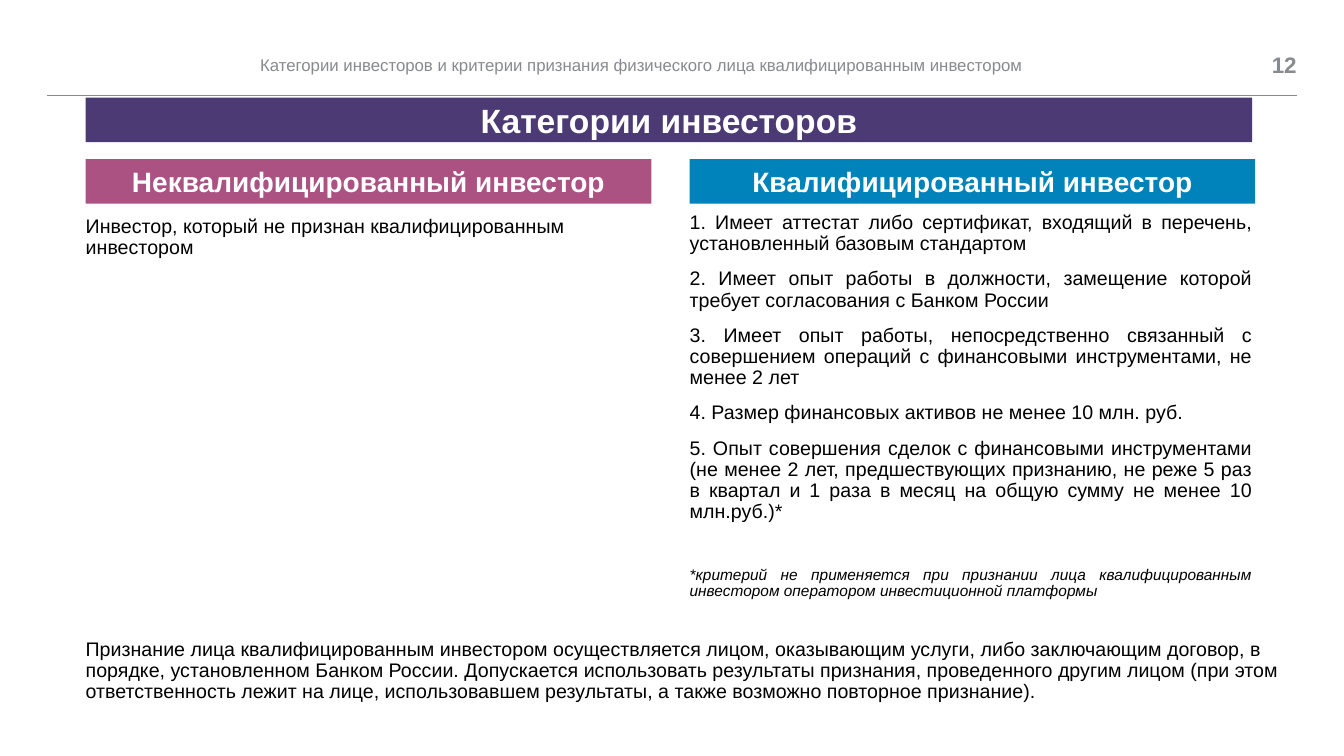
from lxml.etree import SubElement
from pptx import Presentation
from pptx.dml.color import RGBColor
from pptx.enum.shapes import MSO_CONNECTOR as Connector, MSO_SHAPE as Shape
from pptx.enum.text import MSO_ANCHOR as Anchor, PP_ALIGN as Align
from pptx.oxml.ns import qn
from pptx.util import Inches, Pt

GRAY = RGBColor(0x88, 0x8A, 0x8D)
BLACK = RGBColor(0, 0, 0)
WHITE = RGBColor(0xFF, 0xFF, 0xFF)
PURPLE = RGBColor(0x4C, 0x3A, 0x74)
PINK = RGBColor(0xAB, 0x52, 0x82)
BLUE = RGBColor(0x00, 0x82, 0xBB)

LEFT, RIGHT_COLUMN = 0.85, 6.84
COLUMN_WIDTH, BANNER_WIDTH = 5.61, 11.57
BAR_HEIGHT = 0.44

CRITERIA = [
    "Имеет аттестат либо сертификат, входящий в перечень, установленный базовым стандартом",
    "Имеет опыт работы в должности, замещение которой требует согласования с Банком России",
    "Имеет опыт работы, непосредственно связанный с совершением операций "
    "с финансовыми инструментами, не менее 2 лет",
    "Размер финансовых активов не менее 10 млн. руб.",
    "Опыт совершения сделок с финансовыми инструментами (не менее 2 лет, предшествующих "
    "признанию, не реже 5 раз в квартал и 1 раза в месяц на общую сумму не менее 10 млн.руб.)*",
]
FOOTNOTE = ("*критерий не применяется при признании лица квалифицированным "
            "инвестором оператором инвестиционной платформы")
RECOGNITION = (
    "Признание лица квалифицированным инвестором осуществляется лицом, оказывающим услуги, "
    "либо заключающим договор, в порядке, установленном Банком России. Допускается "
    "использовать результаты признания, проведенного другим лицом (при этом ответственность "
    "лежит на лице, использовавшем результаты, а также возможно повторное признание).")


def write(para, text, size=14, color=BLACK, bold=False, italic=False,
          align=Align.LEFT, spacing=None, before=0):
    para.alignment = align
    para.space_before = Pt(before)
    if spacing:
        para.line_spacing = spacing
    span = para.add_run()
    span.text = text
    font = span.font
    font.name, font.size = "Arial", Pt(size)
    font.bold, font.italic = bold, italic
    font.color.rgb = color


def add_frame(page, left, top, width, height, anchor=Anchor.TOP):
    """Add a wrapping text box without margins and return its text frame."""
    box = page.shapes.add_textbox(Inches(left), Inches(top), Inches(width), Inches(height))
    frame = box.text_frame
    frame.word_wrap = True
    frame.vertical_anchor = anchor
    frame.margin_left = frame.margin_right = frame.margin_top = frame.margin_bottom = 0
    return frame


def add_header(page, left, top, width, title, number):
    """Running title and page number above a thin rule."""
    rule_top, number_width = top + 0.48, 0.81
    right = left + width
    rule = page.shapes.add_connector(Connector.STRAIGHT, Inches(left), Inches(rule_top),
                                     Inches(right), Inches(rule_top))
    rule.line.color.rgb = GRAY
    rule.line.width = Pt(0.5)
    SubElement(rule._element.spPr, qn("a:effectLst"))
    title_frame = add_frame(page, left + 2.11, top, 9.23, 0.35, Anchor.MIDDLE)
    write(title_frame.paragraphs[0], title, size=12, color=GRAY)
    number_frame = add_frame(page, right - number_width, top, number_width, 0.35, Anchor.MIDDLE)
    write(number_frame.paragraphs[0], number, size=16, color=GRAY, bold=True, align=Align.RIGHT)


def add_bar(page, left, top, width, text, fill, size=20):
    bar = page.shapes.add_shape(Shape.RECTANGLE, Inches(left), Inches(top),
                                Inches(width), Inches(BAR_HEIGHT))
    bar.shadow.inherit = False
    bar.fill.solid()
    bar.fill.fore_color.rgb = fill
    bar.line.fill.background()
    bar.text_frame.vertical_anchor = Anchor.MIDDLE
    write(bar.text_frame.paragraphs[0], text, size=size, color=WHITE, bold=True,
          align=Align.CENTER)


def add_body(page, left, top, width, height, text):
    frame = add_frame(page, left, top, width, height)
    write(frame.paragraphs[0], text, spacing=0.9)


def add_criteria(page, left, top, width, height):
    """Numbered criteria followed by a footnote."""
    frame = add_frame(page, left, top, width, height)
    for number, criterion in enumerate(CRITERIA, 1):
        first = number == 1
        para = frame.paragraphs[0] if first else frame.add_paragraph()
        write(para, f"{number}. {criterion}", align=Align.JUSTIFY, spacing=0.9,
              before=0 if first else 10)
    write(frame.add_paragraph(), FOOTNOTE, size=11, italic=True, align=Align.JUSTIFY,
          spacing=0.9, before=31.4)


def main():
    deck = Presentation()
    deck.slide_width, deck.slide_height = Inches(13.33), Inches(7.5)
    page = deck.slides.add_slide(deck.slide_layouts[6])
    add_header(page, 0.47, 0.47, 12.39,
               "Категории инвесторов и критерии признания физического лица "
               "квалифицированным инвестором", "12")
    add_body(page, LEFT, 2.15, COLUMN_WIDTH, 4.1,
             "Инвестор, который не признан квалифицированным инвестором")
    add_criteria(page, RIGHT_COLUMN, 2.11, 5.58, 4.1)
    add_bar(page, LEFT, 0.97, BANNER_WIDTH, "Категории инвесторов", PURPLE, size=24)
    add_bar(page, LEFT, 1.58, COLUMN_WIDTH, "Неквалифицированный инвестор", PINK)
    add_bar(page, RIGHT_COLUMN, 1.58, COLUMN_WIDTH, "Квалифицированный инвестор", BLUE)
    add_body(page, LEFT, 6.34, 12.23, 0.72, RECOGNITION)
    deck.save("out.pptx")


if __name__ == "__main__":
    main()
